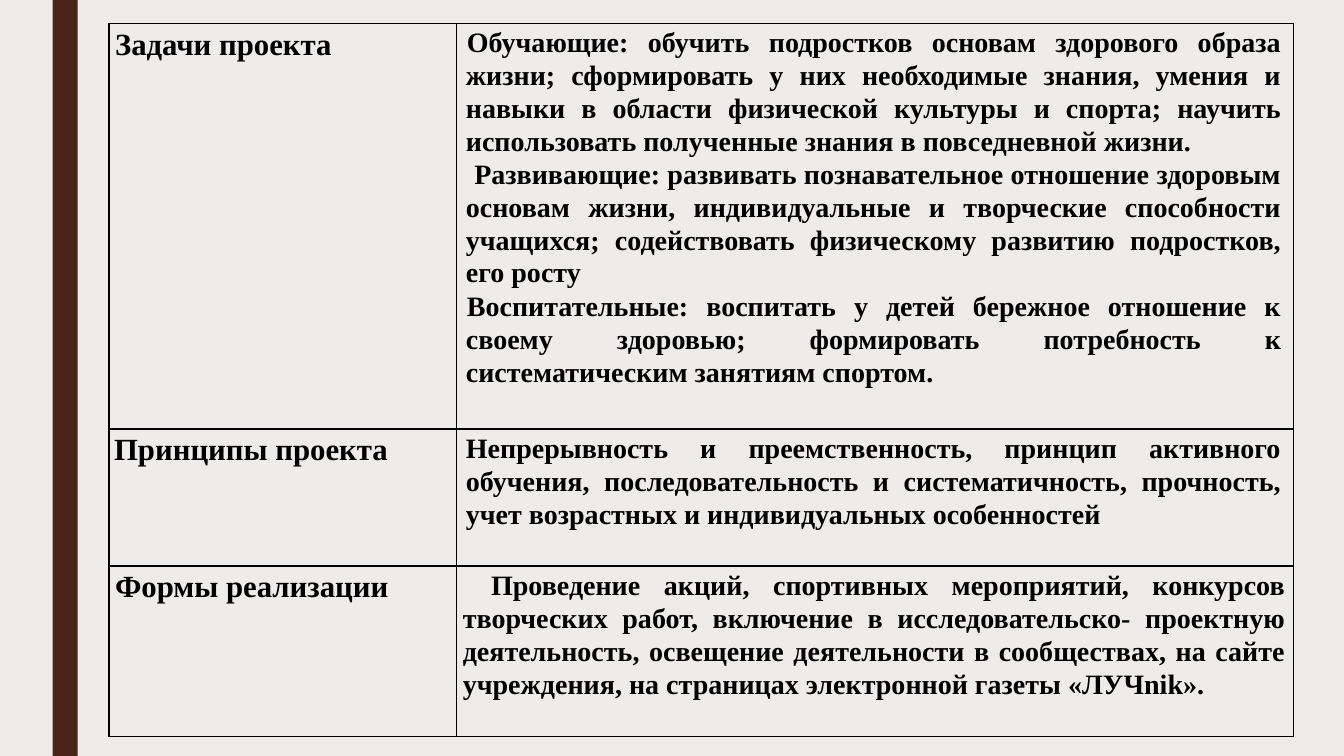
from lxml.etree import SubElement
from pptx import Presentation
from pptx.dml.color import RGBColor
from pptx.enum.shapes import MSO_SHAPE
from pptx.enum.text import PP_ALIGN
from pptx.oxml.ns import qn
from pptx.util import Pt

FONT = "Times New Roman"
BACKGROUND, STRIPE, INK = "EDECEB", "4A2318", "000000"
COLUMN_WIDTHS = (248.4, 597.6)

# Each row: height, heading, paragraphs, then left, first-line and right indents
ROWS = [
    (289.4, "Задачи проекта", [
        "Обучающие: обучить подростков основам здорового образа жизни; "
        "сформировать у них необходимые знания, умения и навыки в области "
        "физической культуры и спорта; научить использовать полученные "
        "знания в повседневной жизни.",
        " Развивающие: развивать познавательное отношение здоровым основам "
        "жизни, индивидуальные и творческие способности учащихся; "
        "содействовать физическому развитию подростков, его росту",
        "Воспитательные: воспитать у детей бережное отношение к своему "
        "здоровью; формировать потребность к систематическим занятиям "
        "спортом.",
    ], (3.6, 0.7, 5.8)),
    (97.9, "Принципы проекта", [
        "Непрерывность и преемственность, принцип активного обучения, "
        "последовательность и систематичность, прочность, учет возрастных "
        "и индивидуальных особенностей",
    ], (3.6, 0, 5.8)),
    (121.7, "Формы реализации", [
        "Проведение акций, спортивных мероприятий, конкурсов творческих "
        "работ, включение в исследовательско- проектную деятельность, "
        "освещение деятельности в сообществах, на сайте учреждения, на "
        "страницах электронной газеты «ЛУЧnik».",
    ], (1.4, 20.2, 2.9)),
]


def color(hex_value):
    return RGBColor.from_string(hex_value)


def add_stripe(slide):
    stripe = slide.shapes.add_shape(
        MSO_SHAPE.RECTANGLE, Pt(37.5), Pt(0), Pt(18), Pt(540))
    stripe.shadow.inherit = False
    stripe.fill.solid()
    stripe.fill.fore_color.rgb = color(STRIPE)
    stripe.line.fill.background()


def add_borders(cell):
    properties = cell._tc.get_or_add_tcPr()
    for position, side in enumerate(("a:lnL", "a:lnR", "a:lnT", "a:lnB")):
        border = SubElement(properties, qn(side), w=str(Pt(1)))
        fill = SubElement(border, qn("a:solidFill"))
        SubElement(fill, qn("a:srgbClr"), val=INK)
        properties.insert(position, border)


def write_cell(cell, texts, size, indents, alignment=PP_ALIGN.JUSTIFY):
    cell.fill.background()
    add_borders(cell)
    cell.margin_left = cell.margin_right = Pt(2.9)
    cell.margin_top, cell.margin_bottom = Pt(1.4), Pt(0)
    left, first_line, right = indents
    frame = cell.text_frame
    for index, text in enumerate(texts):
        paragraph = frame.add_paragraph() if index else frame.paragraphs[0]
        paragraph.text = text
        paragraph.alignment = alignment
        paragraph.line_spacing = 1.06 if index < len(texts) - 1 else 1.07
        paragraph.font.name = FONT
        paragraph.font.size = Pt(size)
        paragraph.font.bold = True
        paragraph.font.color.rgb = color(INK)
        properties = paragraph._p.get_or_add_pPr()
        properties.set("marL", str(Pt(left)))
        properties.set("marR", str(Pt(right)))
        properties.set("indent", str(Pt(first_line)))


def add_project_table(slide):
    heights = [row[0] for row in ROWS]
    project = slide.shapes.add_table(
        len(ROWS), len(COLUMN_WIDTHS), Pt(77.9), Pt(17),
        Pt(sum(COLUMN_WIDTHS)), Pt(sum(heights))).table
    project.first_row = project.horz_banding = False
    for column, width in zip(project.columns, COLUMN_WIDTHS):
        column.width = Pt(width)
    for index, (height, heading, texts, indents) in enumerate(ROWS):
        project.rows[index].height = Pt(height)
        heading_indents = (0.7, min(indents[1], 0.7), 0)
        write_cell(project.cell(index, 0), [heading], 22, heading_indents,
                   PP_ALIGN.LEFT)
        write_cell(project.cell(index, 1), texts, 20, indents)


def main():
    presentation = Presentation()
    presentation.slide_width, presentation.slide_height = Pt(960), Pt(540)
    slide = presentation.slides.add_slide(presentation.slide_layouts[6])
    # Background and side stripe
    slide.background.fill.solid()
    slide.background.fill.fore_color.rgb = color(BACKGROUND)
    add_stripe(slide)
    # Goals, principles and forms of the project
    add_project_table(slide)
    presentation.save("out.pptx")


if __name__ == "__main__":
    main()
